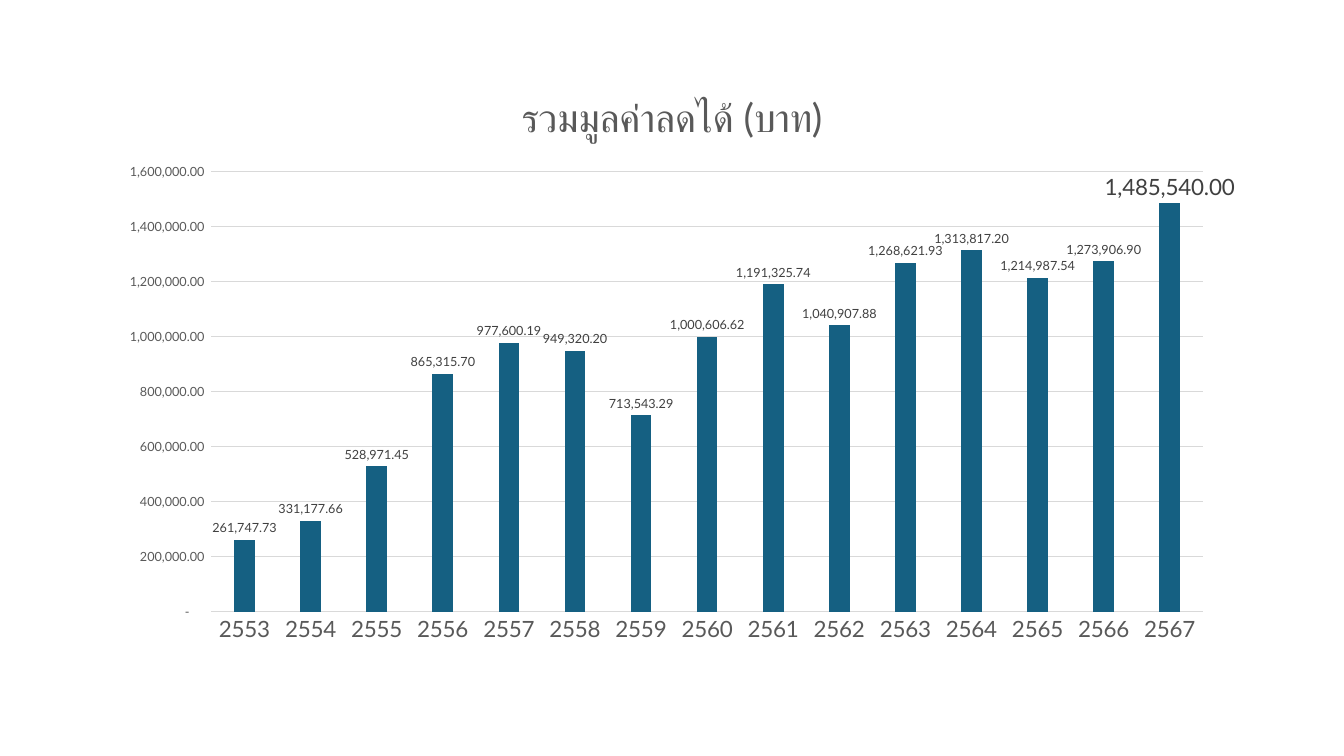
from lxml.etree import SubElement
from pptx import Presentation
from pptx.chart.data import CategoryChartData
from pptx.dml.color import RGBColor
from pptx.enum.chart import XL_CHART_TYPE, XL_LABEL_POSITION, XL_TICK_MARK
from pptx.oxml.ns import qn
from pptx.util import Inches, Pt

# Content
TITLE = "รวมมูลค่าลดได้ (บาท)"
FIRST_YEAR = 2553
SAVINGS = [
    261747.73, 331177.66, 528971.45, 865315.70, 977600.19,
    949320.20, 713543.29, 1000606.62, 1191325.74, 1040907.88,
    1268621.93, 1313817.20, 1214987.54, 1273906.90, 1485540.00,
]

# Style
FONT = "Lato"
COLORS = {"bar": "156082", "text": "595959", "label": "404040", "line": "D9D9D9"}
AMOUNT = "#,##0.00"
ACCOUNTING = '_(* #,##0.00_);_(* \\(#,##0.00\\);_(* "-"??_);_(@_)'
PLOT_SHARES = {"x": 0.094, "y": 0.182, "w": 0.874, "h": 0.746}


def style_font(font, size, color):
    font.name = FONT
    font.size = Pt(size)
    font.bold = False
    font.color.rgb = RGBColor.from_string(COLORS[color])


def style_line(line):
    line.color.rgb = RGBColor.from_string(COLORS["line"])
    line.width = Pt(0.75)


def place_plot(chart):
    plot_area = chart._chartSpace.chart.plotArea
    for old_layout in plot_area.findall(qn("c:layout")):
        plot_area.remove(old_layout)
    layout = SubElement(plot_area, qn("c:layout"))
    plot_area.insert(0, layout)
    manual = SubElement(layout, qn("c:manualLayout"))
    settings = {"layoutTarget": "inner", "xMode": "edge", "yMode": "edge", **PLOT_SHARES}
    for tag, value in settings.items():
        SubElement(manual, qn(f"c:{tag}")).set("val", str(value))


# Slide
deck = Presentation()
deck.slide_width, deck.slide_height = Inches(13.33), Inches(7.5)
slide = deck.slides.add_slide(deck.slide_layouts[6])

# Chart
savings_data = CategoryChartData(number_format=AMOUNT)
savings_data.categories = [str(FIRST_YEAR + i) for i in range(len(SAVINGS))]
savings_data.add_series(TITLE, SAVINGS)
chart = slide.shapes.add_chart(
    XL_CHART_TYPE.COLUMN_CLUSTERED,
    Inches(1.04), Inches(0.64), Inches(11.25), Inches(5.85), savings_data,
).chart
style_font(chart.font, 10, "text")
chart.has_legend = False
place_plot(chart)

# Title
chart.has_title = True
heading = chart.chart_title.text_frame
heading.text = TITLE
style_font(heading.paragraphs[0].runs[0].font, 28, "text")
chart.chart_title.include_in_layout = False

# Axes
years, amounts = chart.category_axis, chart.value_axis
for axis, size in ((years, 16), (amounts, 9)):
    axis.major_tick_mark = axis.minor_tick_mark = XL_TICK_MARK.NONE
    style_font(axis.tick_labels.font, size, "text")
style_line(years.format.line)
amounts.format.line.fill.background()
amounts.has_major_gridlines = True
style_line(amounts.major_gridlines.format.line)
amounts.minimum_scale, amounts.maximum_scale, amounts.major_unit = 0, 1600000, 200000
amounts.tick_labels.number_format = ACCOUNTING
amounts.tick_labels.number_format_is_linked = False

# Bars
plot = chart.plots[0]
plot.gap_width, plot.overlap = 219, -27
plot.vary_by_categories = False
bars = plot.series[0]
bars.format.fill.solid()
bars.format.fill.fore_color.rgb = RGBColor.from_string(COLORS["bar"])

# Value labels, with the latest year enlarged
labels = bars.data_labels
labels.show_value = True
labels.number_format = AMOUNT
labels.number_format_is_linked = False
labels.position = XL_LABEL_POSITION.OUTSIDE_END
style_font(labels.font, 9, "label")
latest = bars.points[len(SAVINGS) - 1].data_label
style_font(latest.font, 16, "label")
latest.position = XL_LABEL_POSITION.OUTSIDE_END

deck.save("out.pptx")
